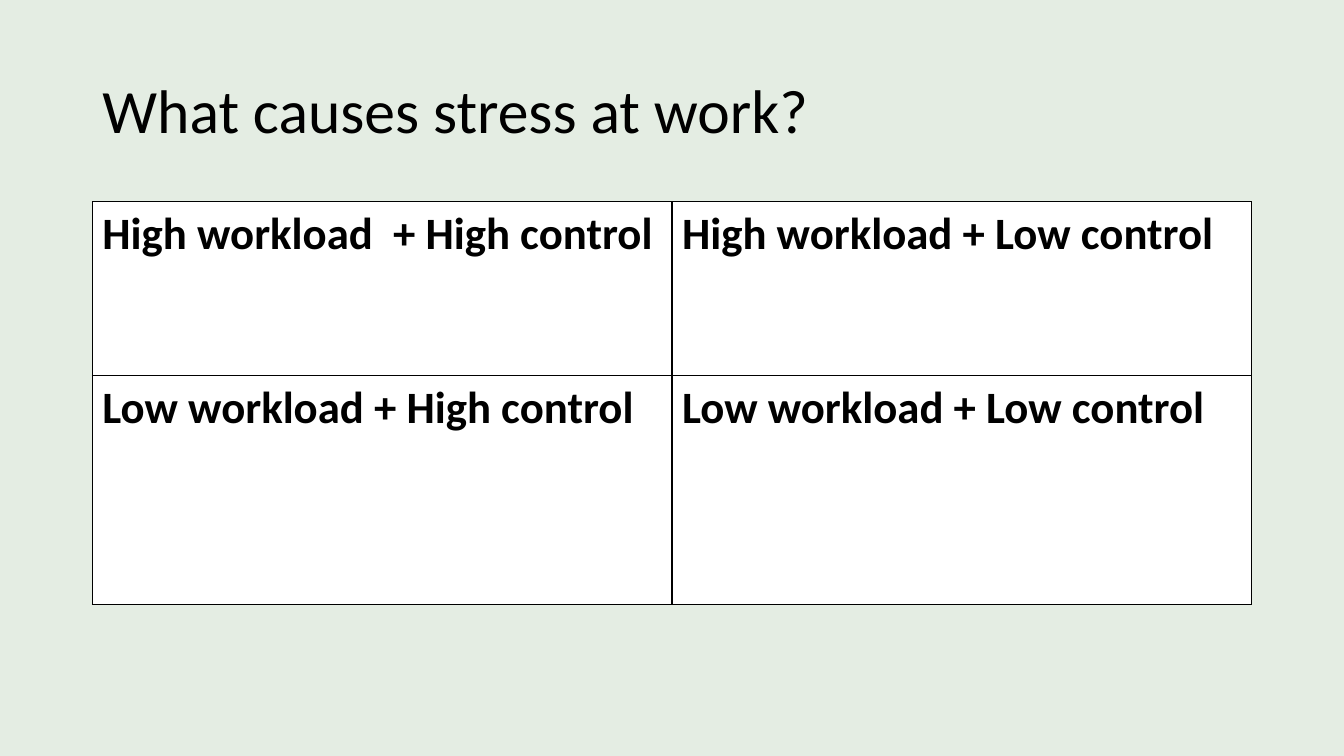
from dataclasses import dataclass

from lxml.etree import SubElement
from pptx import Presentation
from pptx.dml.color import RGBColor
from pptx.enum.text import MSO_ANCHOR, PP_ALIGN
from pptx.oxml.ns import qn
from pptx.slide import Slide
from pptx.table import _Cell
from pptx.text.text import TextFrame
from pptx.util import Pt

PALE_GREEN = RGBColor(0xE4, 0xED, 0xE3)
WHITE = RGBColor(0xFF, 0xFF, 0xFF)
BLACK = RGBColor(0x00, 0x00, 0x00)
FONT = "Calibri"
LEFT, WIDTH = Pt(66), Pt(828)


@dataclass(frozen=True)
class WorkloadRow:
    height: float
    high_control: str
    low_control: str


WORKLOADS = [
    WorkloadRow(124.5, "High workload  + High control", "High workload + Low control"),
    WorkloadRow(163.5, "Low workload + High control", "Low workload + Low control"),
]


def write(frame: TextFrame, text: str, *, size: float, bold: bool = False,
          line_spacing: float = 1.0) -> None:
    paragraph = frame.paragraphs[0]
    paragraph.alignment = PP_ALIGN.LEFT
    paragraph.line_spacing = line_spacing
    run = paragraph.add_run()
    run.text = text
    run.font.name = FONT
    run.font.size = Pt(size)
    run.font.bold = bold
    run.font.color.rgb = BLACK


def draw_borders(cell: _Cell, width: float = 1) -> None:
    properties = cell._tc.get_or_add_tcPr()
    for side in ("a:lnL", "a:lnR", "a:lnT", "a:lnB"):
        border = SubElement(properties, qn(side), w=str(Pt(width)))
        fill = SubElement(border, qn("a:solidFill"))
        SubElement(fill, qn("a:srgbClr"), val=str(BLACK))


def add_heading(slide: Slide, text: str) -> None:
    heading = slide.shapes.title
    heading.left, heading.top = LEFT, Pt(28.75)
    heading.width, heading.height = WIDTH, Pt(104.5)
    heading.text_frame.vertical_anchor = MSO_ANCHOR.MIDDLE
    write(heading.text_frame, text, size=44, line_spacing=0.9)


def add_workload_matrix(slide: Slide, workloads: list[WorkloadRow]) -> None:
    height = Pt(sum(workload.height for workload in workloads))
    matrix = slide.shapes.add_table(
        len(workloads), 2, LEFT, Pt(144), WIDTH, height).table
    matrix.first_row = False
    matrix.horz_banding = False
    for row, workload in zip(matrix.rows, workloads):
        row.height = Pt(workload.height)
        labels = (workload.high_control, workload.low_control)
        for cell, label in zip(row.cells, labels):
            draw_borders(cell)
            cell.fill.solid()
            cell.fill.fore_color.rgb = WHITE
            write(cell.text_frame, label, size=32, bold=True)


def main() -> None:
    presentation = Presentation()
    presentation.slide_width, presentation.slide_height = Pt(960), Pt(540)
    slide = presentation.slides.add_slide(
        presentation.slide_layouts.get_by_name("Title Only"))

    # Background
    slide.background.fill.solid()
    slide.background.fill.fore_color.rgb = PALE_GREEN

    # Question and its four combinations
    add_heading(slide, "What causes stress at work?")
    add_workload_matrix(slide, WORKLOADS)

    presentation.save("out.pptx")


if __name__ == "__main__":
    main()
